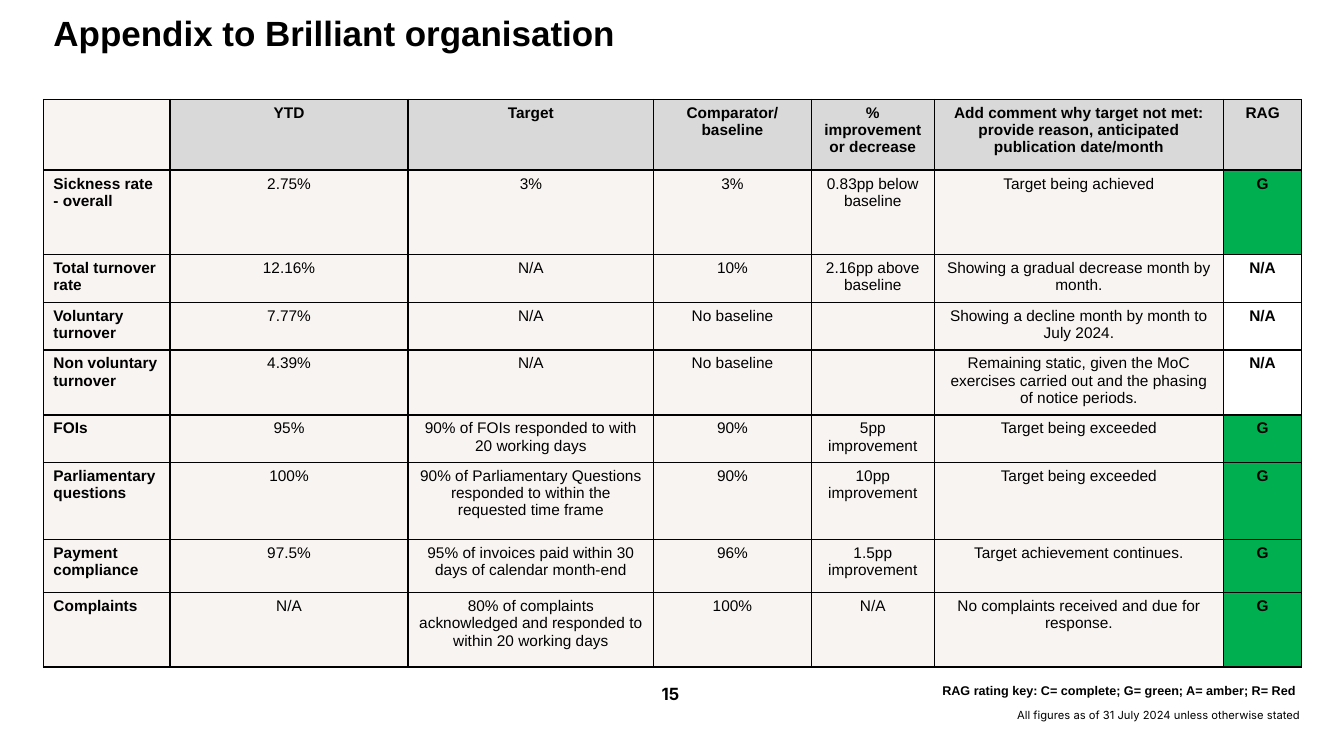
"""Build the appendix slide: a RAG-rated performance table with its key."""
from lxml import etree
from pptx import Presentation
from pptx.dml.color import RGBColor
from pptx.enum import text
from pptx.oxml import parse_xml
from pptx.oxml.ns import nsdecls
from pptx.util import Pt

BLACK, WHITE, GREY, CREAM, GREEN = "000000", "FFFFFF", "D9D9D9", "F7F4F1", "00B050"
RAG_FILLS = {"G": GREEN, "N/A": WHITE}
LEFT, CENTER = text.PP_ALIGN.LEFT, text.PP_ALIGN.CENTER


def rgb(value):
    return RGBColor.from_string(value)


def style(p, size, name="Arial", bold=False, align=LEFT):
    p.alignment = align
    p.font.size, p.font.name, p.font.bold = Pt(size), name, bold
    p.font.color.rgb = rgb(BLACK)


prs = Presentation()
prs.slide_width, prs.slide_height = Pt(960), Pt(540)
s = prs.slides.add_slide(prs.slide_layouts[5])

title = s.shapes.title
title.left, title.top, title.width, title.height = Pt(31), Pt(8), Pt(872), Pt(56)
tf = title.text_frame
tf.text = "Appendix to Brilliant organisation"
tf.vertical_anchor = text.MSO_ANCHOR.TOP
tf.auto_size = text.MSO_AUTO_SIZE.NONE
tf.paragraphs[0].line_spacing = 0.9
style(tf.paragraphs[0], 25, bold=True)

rows = [
    ["", "YTD", "Target", "Comparator/\nbaseline", "% improvement or decrease",
     "Add comment why target not met: provide reason, anticipated publication date/month", "RAG"],
    ["Sickness rate - overall", "2.75%", "3%", "3%", "0.83pp below baseline",
     "Target being achieved", "G"],
    ["Total turnover rate", "12.16%", "N/A", "10%", "2.16pp above baseline",
     "Showing a gradual decrease month by month.", "N/A"],
    ["Voluntary turnover", "7.77%", "N/A", "No baseline", "",
     "Showing a decline month by month to July 2024.", "N/A"],
    ["Non voluntary turnover", "4.39%", "N/A", "No baseline", "",
     "Remaining static, given the MoC exercises carried out and the phasing of notice periods.",
     "N/A"],
    ["FOIs", "95%", "90% of FOIs responded to with 20 working days", "90%", "5pp improvement",
     "Target being exceeded", "G"],
    ["Parliamentary questions", "100%",
     "90% of Parliamentary Questions responded to within the requested time frame", "90%",
     "10pp improvement", "Target being exceeded", "G"],
    ["Payment compliance", "97.5%", "95% of invoices paid within 30 days of calendar month-end",
     "96%", "1.5pp improvement", "Target achievement continues.", "G"],
    ["Complaints", "N/A",
     "80% of complaints acknowledged and responded to within 20 working days", "100%", "N/A",
     "No complaints received and due for response.", "G"],
]
col_widths = [90.5, 170, 175.5, 112.5, 88, 206.5, 56]
row_heights = [50.5, 60.5, 34, 34, 46.5, 34, 55, 38, 53]

table = s.shapes.add_table(len(rows), len(col_widths), Pt(31), Pt(71), Pt(sum(col_widths)),
                           Pt(sum(row_heights))).table
table.first_row = table.horz_banding = False
for column, width in zip(table.columns, col_widths):
    column.width = Pt(width)
for i, (values, height) in enumerate(zip(rows, row_heights)):
    table.rows[i].height = Pt(height)
    for j, value in enumerate(values):
        cell = table.cell(i, j)
        cell.text = value
        last = j == len(values) - 1
        for p in cell.text_frame.paragraphs:
            style(p, 11, bold=i == 0 or j == 0 or last, align=CENTER if j else LEFT)
        tcPr = cell._tc.get_or_add_tcPr()
        for side in "LRTB":
            tcPr.append(parse_xml(
                f'<a:ln{side} {nsdecls("a")} w="{Pt(1)}"><a:solidFill>'
                f'<a:srgbClr val="{BLACK}"/></a:solidFill></a:ln{side}>'))
        cell.fill.solid()
        if i == 0 and j:
            fill = GREY
        else:
            fill = RAG_FILLS[value] if last else CREAM
        cell.fill.fore_color.rgb = rgb(fill)

captions = [
    ("15", 371, 485, 216, 29, 12, "Inter", True, CENTER),
    ("RAG rating key: C= complete; G= green; A= amber; R= Red",
     666, 484.5, 274.5, 18, 9, "Arial", True, LEFT),
    ("All figures as of 31 July 2024 unless otherwise stated",
     719.5, 502.5, 235.5, 17, 8, "Inter", False, LEFT),
]
for words, x, y, w, h, size, name, bold, align in captions:
    tf = s.shapes.add_textbox(Pt(x), Pt(y), Pt(w), Pt(h)).text_frame
    tf.word_wrap = True
    tf.text = words
    style(tf.paragraphs[0], size, name, bold, align)

prs.save("out.pptx")
